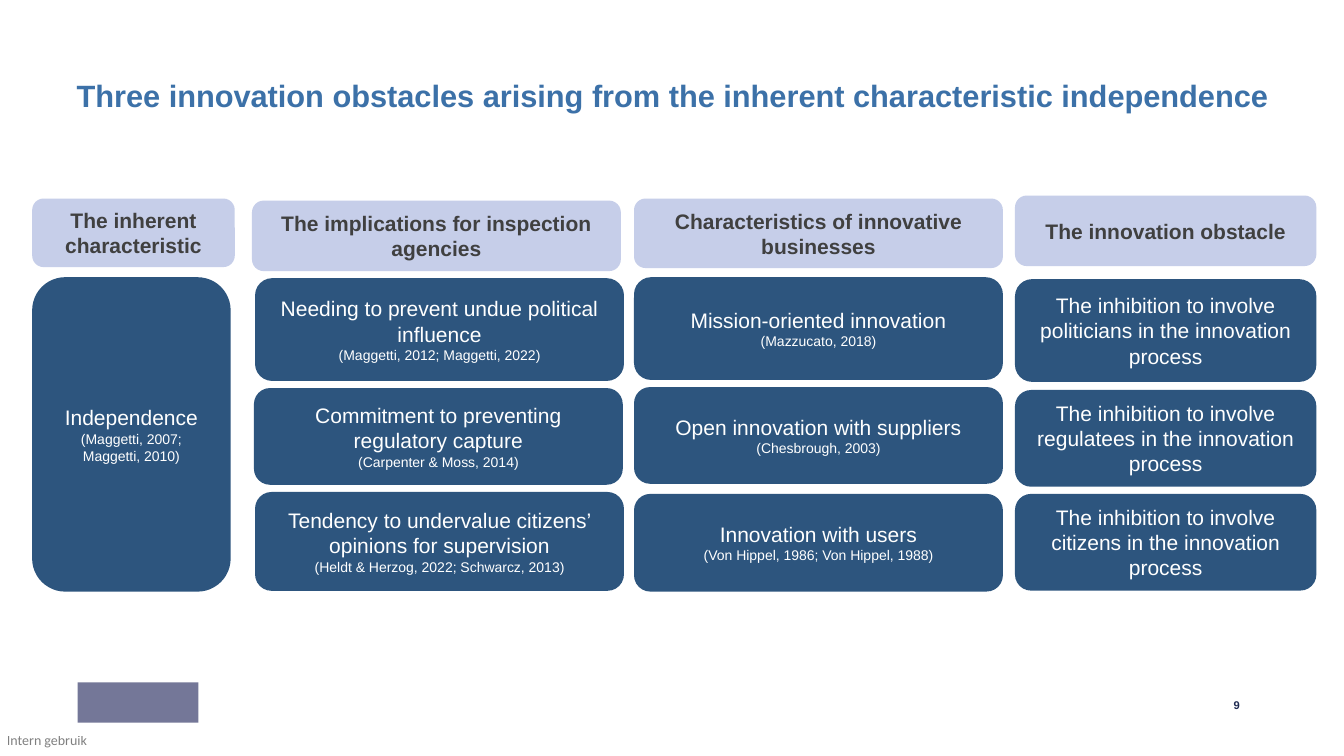
from dataclasses import dataclass

from lxml.etree import SubElement
from pptx import Presentation
from pptx.dml.color import RGBColor
from pptx.enum.shapes import MSO_SHAPE
from pptx.enum.text import MSO_ANCHOR, PP_ALIGN
from pptx.oxml.ns import qn
from pptx.util import Pt


@dataclass(frozen=True)
class Theme:
    font: str = "Arial"
    label_font: str = "Calibri"
    title: str = "3C71A8"
    header: str = "C6CEE9"
    header_text: str = "404040"
    body: str = "2D557E"
    body_text: str = "FFFFFF"
    number: str = "202B52"
    label: str = "000000"
    emblem: str = "747798"
    title_size: float = 22
    box_size: float = 15
    source_size: float = 10
    label_size: float = 10
    number_size: float = 8


@dataclass(frozen=True)
class Cell:
    text: str
    source: str
    top: float
    height: float
    indent: float = 0


@dataclass(frozen=True)
class Column:
    header: str
    header_box: tuple
    cell_left: float
    cell_width: float
    cells: tuple


THEME = Theme()
SLIDE_SIZE = (960, 540)
TABLE_ORIGIN = (23, 139.7)
SPACED = {"line_spacing": 0.9, "space_before": Pt(6), "space_after": Pt(6)}
CENTERED = {"alignment": PP_ALIGN.CENTER}

COLUMNS = (
    Column("The inherent characteristic", (0, 2.1, 144.7, 49), 0, 141.8, (
        Cell("Independence", "(Maggetti, 2007; Maggetti, 2010)", 58.3, 224.6),
    )),
    Column("The implications for inspection agencies", (157, 3.6, 263.5, 50.4), 159.2, 263.5, (
        Cell("Needing to prevent undue political influence",
             "(Maggetti, 2012; Maggetti, 2022)", 59, 73.4),
        Cell("Commitment to preventing regulatory capture",
             "(Carpenter & Moss, 2014)", 137.5, 69.1, -0.8),
        Cell("Tendency to undervalue citizens’ opinions for supervision",
             "(Heldt & Herzog, 2022; Schwarcz, 2013)", 211.7, 70.6),
    )),
    Column("Characteristics of innovative businesses", (429.9, 2.1, 263.5, 49.7), 429.9, 263.5, (
        Cell("Mission-oriented innovation", "(Mazzucato, 2018)", 58.3, 73.4),
        Cell("Open innovation with suppliers", "(Chesbrough, 2003)", 136.8, 69.1),
        Cell("Innovation with users",
             "(Von Hippel, 1986; Von Hippel, 1988)", 213.1, 69.8),
    )),
    Column("The innovation obstacle", (702, 0, 215.3, 50.4), 702, 215.3, (
        Cell("The inhibition to involve politicians in the innovation process", "", 59.7, 73.4),
        Cell("The inhibition to involve regulatees in the innovation process", "", 138.9, 69.1),
        Cell("The inhibition to involve citizens in the innovation process", "", 213.1, 69.1),
    )),
)


def apply_format(target, values):
    for name, value in values.items():
        setattr(target, name, value)


def write_paragraph(paragraph, text, font, color, layout):
    apply_format(paragraph, layout)
    run = paragraph.add_run()
    run.text = text
    apply_format(run.font, font)
    run.font.color.rgb = RGBColor.from_string(color)
    return run


def add_plain_shape(slide, kind, box, color):
    shape = slide.shapes.add_shape(kind, *map(Pt, box))
    shape.shadow.inherit = False
    shape.fill.solid()
    shape.fill.fore_color.rgb = RGBColor.from_string(color)
    shape.line.fill.background()
    return shape


def add_rounded_box(slide, box, fill, color, lines, bold=False):
    shape = add_plain_shape(slide, MSO_SHAPE.ROUNDED_RECTANGLE, box, fill)
    frame = shape.text_frame
    apply_format(frame, {"word_wrap": True, "vertical_anchor": MSO_ANCHOR.MIDDLE})
    for index, (text, size) in enumerate(lines):
        paragraph = frame.add_paragraph() if index else frame.paragraphs[0]
        font = {"name": THEME.font, "size": Pt(size), "bold": bold}
        write_paragraph(paragraph, text, font, color, CENTERED)


def add_label(slide, box, text, font, color, layout, anchor=MSO_ANCHOR.TOP):
    frame = slide.shapes.add_textbox(*map(Pt, box)).text_frame
    margins = {f"margin_{side}": 0 for side in ("left", "top", "right", "bottom")}
    apply_format(frame, {"word_wrap": True, "vertical_anchor": anchor, **margins})
    return write_paragraph(frame.paragraphs[0], text, font, color, layout)


def add_title(slide, box):
    font = {"name": THEME.font, "size": Pt(THEME.title_size), "bold": True}
    text = "Three innovation obstacles arising from the inherent characteristic independence"
    add_label(slide, box, text, font, THEME.title, SPACED)


def add_column(slide, origin, column):
    left, top = origin
    header_left, header_top, width, height = column.header_box
    add_rounded_box(slide, (left + header_left, top + header_top, width, height),
                    THEME.header, THEME.header_text,
                    [(column.header, THEME.box_size)], bold=True)
    for cell in column.cells:
        lines = [(cell.text, THEME.box_size)]
        if cell.source:
            lines.append((cell.source, THEME.source_size))
        box = (left + column.cell_left + cell.indent, top + cell.top,
               column.cell_width, cell.height)
        add_rounded_box(slide, box, THEME.body, THEME.body_text, lines)


def add_footer(slide, box):
    left, top, width, height = box
    add_plain_shape(slide, MSO_SHAPE.RECTANGLE, (left + 55.4, top, 86.4, 28.8), THEME.emblem)
    number_font = {"name": THEME.font, "size": Pt(THEME.number_size), "bold": True}
    add_label(slide, (left + width - 21, top + 9.4, 21, 14.4), "9", number_font,
              THEME.number, {"alignment": PP_ALIGN.RIGHT, **SPACED}, MSO_ANCHOR.MIDDLE)
    label_font = {"name": THEME.label_font, "size": Pt(THEME.label_size)}
    run = add_label(slide, (left + 5, top + height - 12.2, 70, 12.2), "Intern gebruik",
                    label_font, THEME.label, {})
    color = run.font.fill._xPr.find(qn("a:solidFill"))[0]
    SubElement(color, qn("a:alpha")).set("val", "50000")


def main():
    presentation = Presentation()
    width, height = SLIDE_SIZE
    apply_format(presentation, {"slide_width": Pt(width), "slide_height": Pt(height)})
    slide = presentation.slides.add_slide(presentation.slide_layouts[6])
    add_title(slide, (54.7, 57.6, 864.7, 28))
    for column in COLUMNS:
        add_column(slide, TABLE_ORIGIN, column)
    add_footer(slide, (0, 487.4, 885.6, 47.5))
    presentation.save("out.pptx")


if __name__ == "__main__":
    main()
